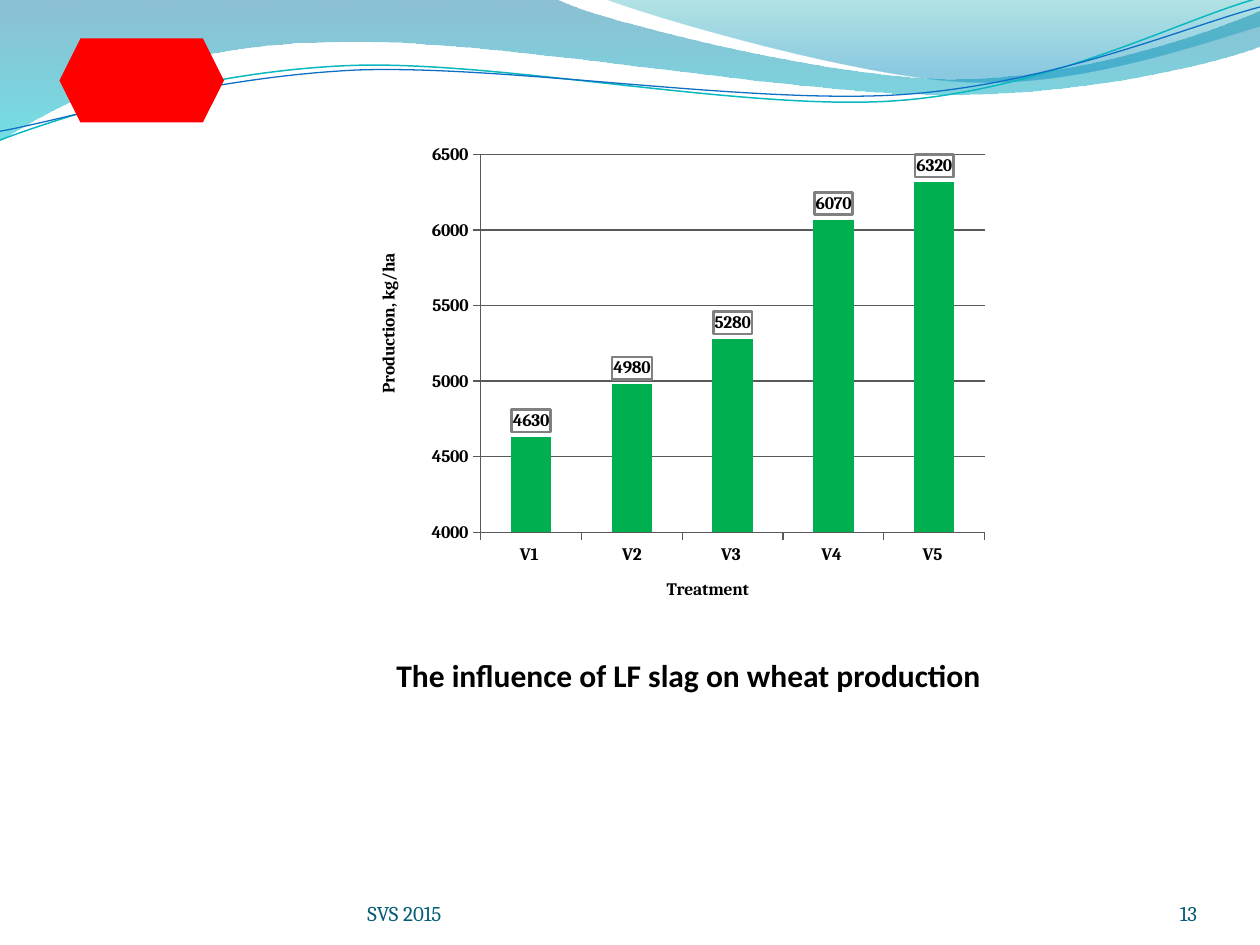
import pptx
import pptx.chart.data
import pptx.dml.color
import pptx.enum.chart
import pptx.enum.shapes
import pptx.enum.text
import pptx.oxml
import pptx.oxml.ns
import pptx.util

Pt = pptx.util.Pt
qn = pptx.oxml.ns.qn
RGB = pptx.dml.color.RGBColor.from_string
ALIGN = pptx.enum.text.PP_ALIGN
ANCHOR = pptx.enum.text.MSO_ANCHOR
SHAPE = pptx.enum.shapes.MSO_SHAPE
NS = pptx.oxml.ns.nsdecls("a", "c")

# ---- Content (lengths in points) ----
CAPTION = "The influence of LF slag on wheat production"
FOOTER, PAGE = "SVS 2015", "13"
YIELDS = {"V1 ": 4630, "V2": 4980, "V3 ": 5280, "V4 ": 6070, "V5 ": 6320}
X_TITLE, Y_TITLE = "Treatment", "Production, kg/ha"

THEME = {
    "text": "000000", "footer": "045D75", "bar": "00B050", "axis": "595959",
    "label_box": "808080", "emblem": "FF0000",
    "title_font": "Calibri", "body_font": "Cambria",
    "title_size": 18, "footer_size": 12, "chart_size": 10,
}

# Each outline: start, then straight (x, y) or curved (x1, y1, x2, y2, x, y) steps
BANDS = [
    # gradient stops are position, colour, opacity in percent
    ([(0, "0074A1", 45), (1, "00C6CF", 55)], [
        (0, -1), (317, -1), (343, 12, 478, 45, 546, 45), (614, 45, 690, 19, 720, 6),
        (721, 26), (708, 32, 626, 55, 537, 54), (447, 54, 275, 20, 185, 24),
        (93, 25, 33, 60, -1, 81)]),
    ([(0, "00A1A9", 30), (0.8, "008BBF", 45)], [
        (345, -1), (367, 8, 491, 45, 554, 47), (618, 50, 692, 23, 720, 15), (720, 0)]),
]
WAVES = [
    ("0AB8BF", 0.85, [(0, 80), (35, 67, 114, 41, 199, 37.5),
                      (284, 34, 427, 64, 513, 57.5), (600, 51, 675, 11, 719, -1)]),
    ("0F6FC6", 0.75, [(0, 75), (34, 69, 118, 44, 204, 40),
                      (290, 37, 430, 60, 516, 54), (602, 48, 678, 15, 720, 4)]),
]


def add_outline(s, steps, close):
    """Draw an outline, joining each curved step's three points into a Bezier."""
    points = [(Pt(step[i]), Pt(step[i + 1]))
              for step in steps for i in range(0, len(step), 2)]
    builder = s.shapes.build_freeform(*points[0])
    builder.add_line_segments(points[1:], close=close)
    sp = builder.convert_to_shape()
    sp.shadow.inherit = False
    lines = iter(list(sp._element.spPr.iter(qn("a:lnTo"))))
    for step in steps[1:]:
        parts = [next(lines) for _ in range(len(step) // 2)]
        if len(parts) == 3:
            curve = pptx.oxml.parse_xml(f"<a:cubicBezTo {NS}/>")
            parts[0].addprevious(curve)
            for part in parts:
                curve.append(part[0])
                part.getparent().remove(part)
    return sp


def set_text(sp, text, box, size, color, font, align, anchor, bold=False, inset=0):
    sp.left, sp.top, sp.width, sp.height = map(Pt, box)
    tf = sp.text_frame
    tf.word_wrap = True
    tf.vertical_anchor = anchor
    tf.margin_left = tf.margin_right = tf.margin_top = tf.margin_bottom = Pt(inset)
    p = tf.paragraphs[0]
    p.text, p.alignment = text, align
    p.font.size, p.font.name, p.font.bold = Pt(size), font, bold
    p.font.color.rgb = RGB(color)


def set_layout(parent, **values):
    """Give a chart part a manual layout."""
    old = parent.find(qn("c:layout"))
    if old is not None:
        parent.remove(old)
    inner = '<c:layoutTarget val="inner"/>' if "w" in values else ""
    modes = "".join(f'<c:{k}Mode val="edge"/>' for k in "xy")
    sizes = "".join(f'<c:{k} val="{v}"/>' for k, v in values.items())
    layout = pptx.oxml.parse_xml(
        f"<c:layout {NS}><c:manualLayout>{inner}{modes}{sizes}</c:manualLayout></c:layout>")
    parent.insert(0 if parent.find(qn("c:tx")) is None else 1, layout)


def style_font(font):
    font.name, font.size, font.bold = THEME["body_font"], Pt(THEME["chart_size"]), True
    font.color.rgb = RGB(THEME["text"])


def style_axis(axis, title, x, y):
    axis.major_tick_mark = pptx.enum.chart.XL_TICK_MARK.OUTSIDE
    axis.format.line.color.rgb = RGB(THEME["axis"])
    p = axis.axis_title.text_frame.paragraphs[0]
    p.text = title
    style_font(p.font)
    set_layout(axis.axis_title._element, x=x, y=y)


def add_yield_chart(s):
    data = pptx.chart.data.CategoryChartData()
    data.categories = list(YIELDS)
    data.add_series("Series 1", list(YIELDS.values()))
    chart = s.shapes.add_chart(
        pptx.enum.chart.XL_CHART_TYPE.COLUMN_CLUSTERED,
        Pt(213.5), Pt(61), Pt(360), Pt(304), data).chart
    chart.has_legend = chart.has_title = False
    style_font(chart.font)

    style_axis(chart.category_axis, X_TITLE, 0.46, 0.88)
    axis = chart.value_axis
    style_axis(axis, Y_TITLE, 0, 0.27)
    axis.minimum_scale, axis.maximum_scale, axis.major_unit = 4000, 6500, 500
    axis.has_major_gridlines = True
    axis.major_gridlines.format.line.color.rgb = RGB(THEME["axis"])

    plot = chart.plots[0]
    plot.gap_width, plot.vary_by_categories = 150, False
    series = plot.series[0]
    series.format.fill.solid()
    series.format.fill.fore_color.rgb = RGB(THEME["bar"])

    # Boxed value labels
    labels = series.data_labels
    labels.show_value = True
    labels.position = pptx.enum.chart.XL_LABEL_POSITION.OUTSIDE_END
    style_font(labels.font)
    labels._element.find(qn("c:txPr")).addprevious(pptx.oxml.parse_xml(
        f'<c:spPr {NS}><a:noFill/><a:ln w="{Pt(1.5)}"><a:solidFill>'
        f'<a:srgbClr val="{THEME["label_box"]}"/></a:solidFill></a:ln></c:spPr>'))
    set_layout(chart._chartSpace.chart.plotArea, x=0.17, y=0.09, w=0.8, h=0.71)


def main():
    prs = pptx.Presentation()
    prs.slide_width, prs.slide_height = Pt(720), Pt(540)
    s = prs.slides.add_slide(prs.slide_layouts[5])

    # Translucent header bands
    for stops, steps in BANDS:
        sp = add_outline(s, steps, True)
        sp.line.fill.background()
        sp.fill.gradient()
        sp.fill.gradient_angle = 270
        for stop, (position, color, _) in zip(sp.fill.gradient_stops, stops):
            stop.position, stop.color.rgb = position, RGB(color)
        colors = sp._element.spPr.iter(qn("a:srgbClr"))
        for clr, (_, _, opacity) in zip(list(colors), stops):
            clr.append(pptx.oxml.parse_xml(f'<a:alpha {NS} val="{opacity * 1000}"/>'))

    # Header wave lines
    for color, width, steps in WAVES:
        sp = add_outline(s, steps, False)
        sp.fill.background()
        sp.line.color.rgb, sp.line.width = RGB(color), Pt(width)

    # Plain emblem
    sp = s.shapes.add_shape(SHAPE.HEXAGON, Pt(34), Pt(22), Pt(94), Pt(48))
    sp.shadow.inherit = False
    sp.fill.solid()
    sp.fill.fore_color.rgb = RGB(THEME["emblem"])
    sp.line.fill.background()

    add_yield_chart(s)

    # Caption and footer
    set_text(s.shapes.title, CAPTION, (174.5, 371.5, 438, 29), THEME["title_size"],
             THEME["text"], THEME["title_font"], ALIGN.CENTER, ANCHOR.TOP, True, 3.6)
    for text, box, align in [(PAGE, (624, 500, 60, 29), ALIGN.RIGHT),
                             (FOOTER, (210, 500, 264, 29), ALIGN.LEFT)]:
        set_text(s.shapes.add_textbox(0, 0, 0, 0), text, box, THEME["footer_size"],
                 THEME["footer"], THEME["body_font"], align, ANCHOR.BOTTOM)

    prs.save("out.pptx")


if __name__ == "__main__":
    main()
